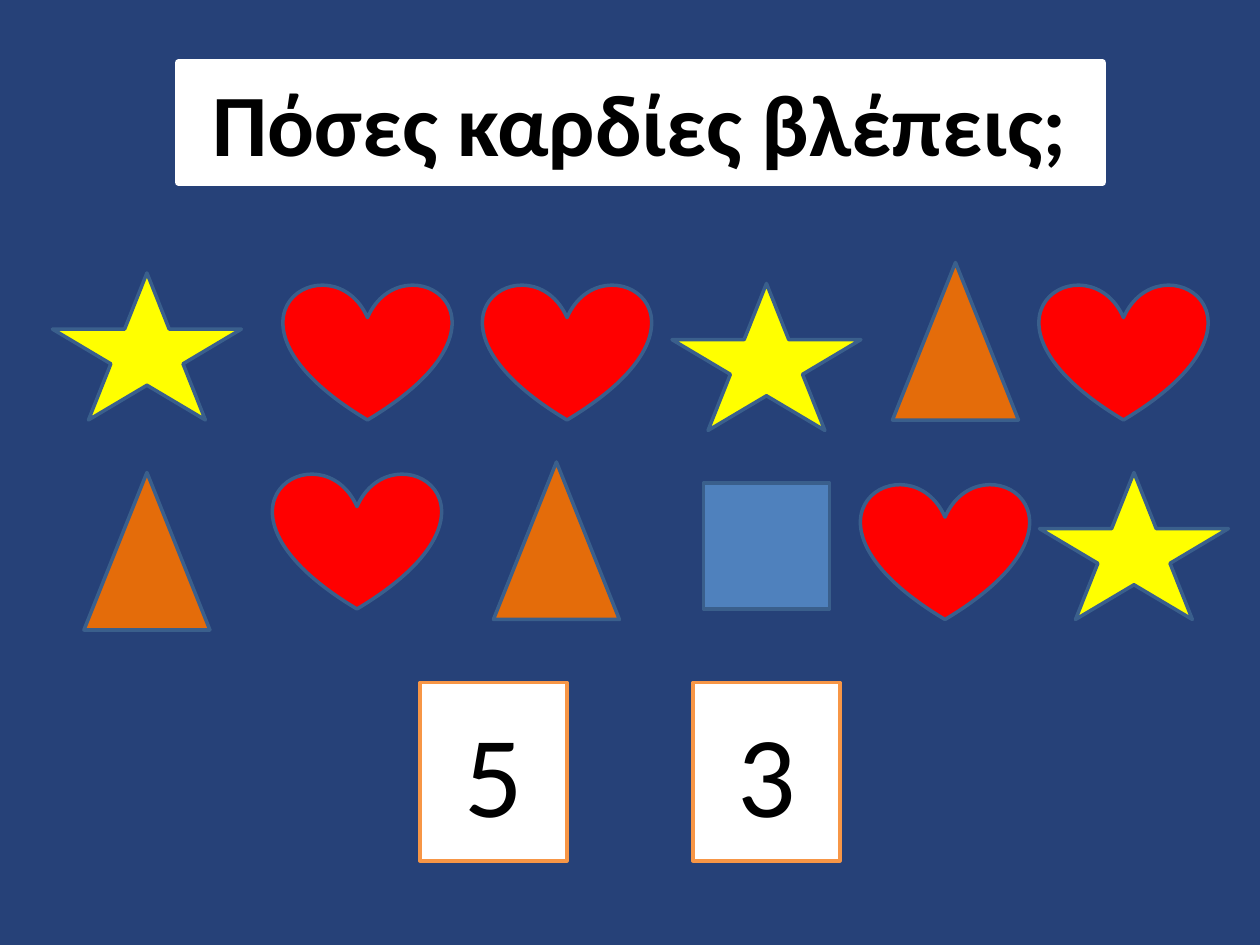
from dataclasses import dataclass

from pptx import Presentation
from pptx.dml.color import RGBColor
from pptx.enum.shapes import MSO_SHAPE as Preset
from pptx.enum.text import MSO_ANCHOR as Anchor, PP_ALIGN as Align
from pptx.util import Pt


@dataclass(frozen=True)
class Theme:
    font: str = "Calibri"
    background: str = "264178"
    paper: str = "FFFFFF"
    ink: str = "000000"
    figure_line: str = "3A5F8C"
    card_line: str = "F79646"
    yellow: str = "FFFF00"
    red: str = "FF0000"
    orange: str = "E46C0A"
    blue: str = "4F81BD"
    title_size: int = 50
    answer_size: int = 66
    line_width: float = 2
    title_line_width: float = 4.5


class SlideBuilder:
    def __init__(self, slide, theme):
        self.slide = slide
        self.theme = theme
        # Preset, width, height and fill of each countable figure
        self.figures = {
            "star": (Preset.STAR_5_POINT, 108, 84, theme.yellow),
            "heart": (Preset.HEART, 96, 78, theme.red),
            "triangle": (Preset.ISOSCELES_TRIANGLE, 72, 90, theme.orange),
            "square": (Preset.RECTANGLE, 72, 72, theme.blue),
        }

    def background(self):
        fill = self.slide.background.fill
        fill.solid()
        fill.fore_color.rgb = RGBColor.from_string(self.theme.background)

    def shape(self, preset, left, top, width, height, fill, line, line_width):
        shape = self.slide.shapes.add_shape(
            preset, Pt(left), Pt(top), Pt(width), Pt(height))
        shape.shadow.inherit = False
        shape.fill.solid()
        shape.fill.fore_color.rgb = RGBColor.from_string(fill)
        shape.line.color.rgb = RGBColor.from_string(line)
        shape.line.width = Pt(line_width)
        return shape

    def figure(self, name, left, top):
        preset, width, height, fill = self.figures[name]
        self.shape(preset, left, top, width, height, fill,
                   self.theme.figure_line, self.theme.line_width)

    def text(self, shape, text, size, anchor, bold=False):
        frame = shape.text_frame
        frame.word_wrap = True
        frame.vertical_anchor = anchor
        paragraph = frame.paragraphs[0]
        paragraph.text = text
        paragraph.alignment = Align.CENTER
        font = paragraph.font
        font.name, font.size, font.bold = self.theme.font, Pt(size), bold
        font.color.rgb = RGBColor.from_string(self.theme.ink)

    def title(self, text, left, top, width, height):
        theme = self.theme
        shape = self.shape(Preset.RECTANGLE, left, top, width, height,
                           theme.paper, theme.paper, theme.title_line_width)
        self.text(shape, text, theme.title_size, Anchor.TOP, bold=True)

    def answer(self, text, left, top):
        theme = self.theme
        shape = self.shape(Preset.RECTANGLE, left, top, 84, 102,
                           theme.paper, theme.card_line, theme.line_width)
        self.text(shape, text, theme.answer_size, Anchor.MIDDLE)


def main():
    presentation = Presentation()
    presentation.slide_width, presentation.slide_height = Pt(720), Pt(540)
    slide = presentation.slides.add_slide(presentation.slide_layouts[6])
    builder = SlideBuilder(slide, Theme())
    builder.background()

    # Question
    builder.title("Πόσες καρδίες βλέπεις;", 102, 36, 528, 68)

    # Figures to count, placed by hand: name, left, top
    upper_row = [
        ("star", 30, 156), ("heart", 162, 162), ("heart", 276, 162),
        ("star", 384, 162), ("triangle", 510, 150), ("heart", 594, 162),
    ]
    lower_row = [
        ("triangle", 48, 270), ("heart", 156, 270), ("triangle", 282, 264),
        ("square", 402, 276), ("heart", 492, 276), ("star", 594, 270),
    ]
    for name, left, top in upper_row + lower_row:
        builder.figure(name, left, top)

    # Answer cards
    for text, left in (("5", 240), ("3", 396)):
        builder.answer(text, left, 390)

    presentation.save("out.pptx")


if __name__ == "__main__":
    main()
